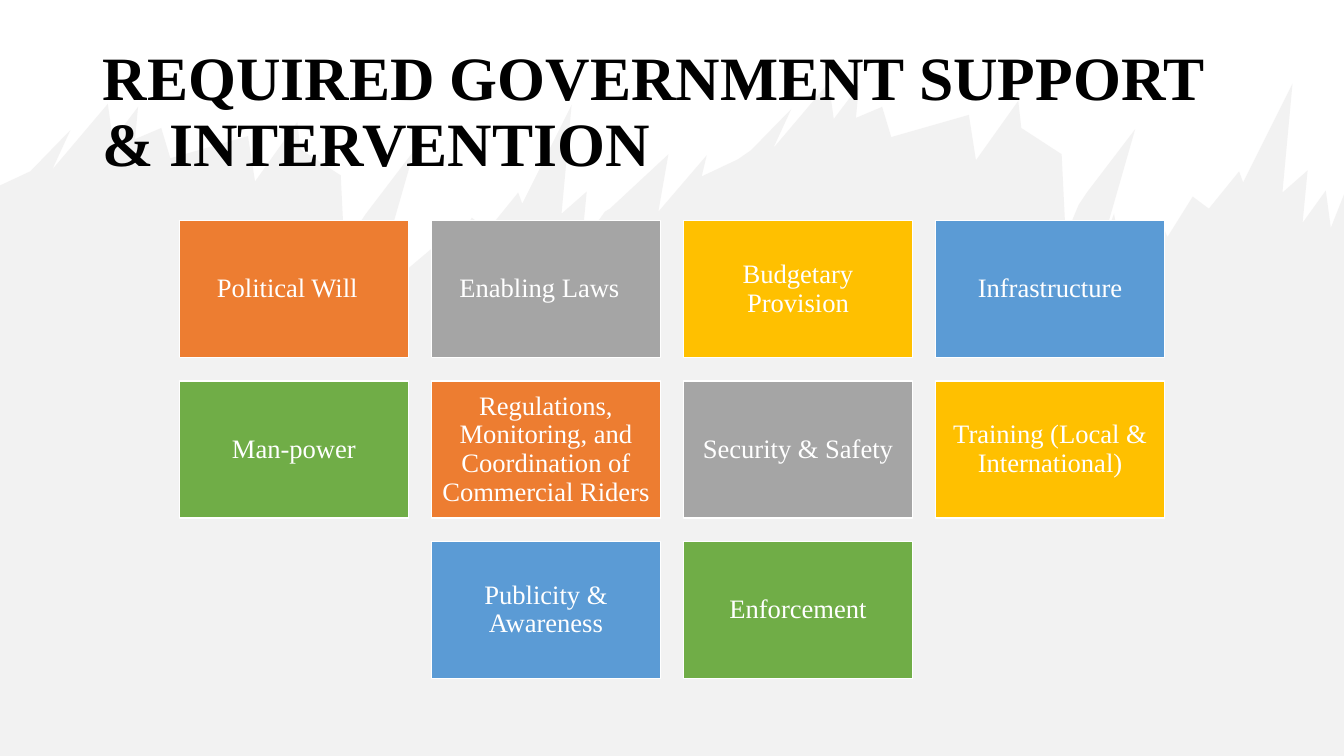
from dataclasses import dataclass
from itertools import cycle

from lxml.etree import SubElement
from pptx import Presentation
from pptx.dml.color import RGBColor as RGB
from pptx.enum.shapes import MSO_SHAPE as Shape
from pptx.enum.text import MSO_ANCHOR as Anchor, PP_ALIGN as Align
from pptx.oxml.ns import qn
from pptx.util import Pt

PX = 9144  # EMU in one px, 100 px to the inch
SLIDE_WIDTH, SLIDE_HEIGHT = 1333, 750


@dataclass(frozen=True)
class Theme:
    font: str = "Times New Roman"
    title_size: int = 44
    card_size: int = 19
    title_color: str = "000000"
    card_text: str = "FFFFFF"
    backdrop: str = "E7E6E6"
    backdrop_alpha: int = 50  # percent
    card_fills: tuple = ("ED7D31", "A5A5A5", "FFC000", "5B9BD5", "70AD47")


@dataclass(frozen=True)
class Flame:
    """A tongue of the skyline: its left foot, then the run and rise to its tip."""
    foot_x: int
    foot_y: int
    run: int
    rise: int

    def outline(self, dx, dy):
        x, y = self.foot_x + dx, self.foot_y + dy
        return [(x, y), (x + self.run, y - self.rise)]


THEME = Theme()

# The ridge, measured from its own left foot
RIDGE = [
    Flame(0, 0, 40, 41), Flame(22, -2, 55, 65),  # tall left peak
    Flame(82, -31, 25, 33), Flame(104, -32, 26, 11),
    Flame(139, -13, 77, 22), Flame(223, 10, 42, 59),  # broad middle
    Flame(268, -22, 40, -26), Flame(312, 85, 13, 31),
    Flame(333, 42, 48, 63), Flame(346, 101, 14, 38),  # leaning tongue
    Flame(367, 103, 39, 33), Flame(413, 86, 25, 40), Flame(454, 58, 30, 37),
    Flame(488, 32, 49, 98), Flame(527, 42, 25, 22),  # tall right peak
    Flame(547, 72, 23, 32),
]
RIDGE_STARTS = [(30, 170), (745, 149)]

# Small flames between the two ridges
VALLEY_START = (605, 207)
VALLEY = [Flame(0, 0, 58, 54), Flame(48, 3, 48, 56), Flame(91, -32, 36, 17)]

# Where the skyline meets the sides of the slide
LEFT_SHORE, RIGHT_NOTCH, RIGHT_SHORE = (0, 184), (1320, 226), (1333, 193)

# Card label and extra right inset
CARDS = [
    ("Political Will", 13),
    ("Enabling Laws", 13),
    ("Budgetary Provision", 0),
    ("Infrastructure", 0),
    ("Man-power", 0),
    ("Regulations, Monitoring, and Coordination of Commercial Riders", 0),
    ("Security & Safety", 0),
    ("Training (Local & International)", 0),
    ("Publicity & Awareness", 0),
    ("Enforcement", 0),
]
CARD_INSET = 8


def to_emu(*lengths):
    return [length * PX for length in lengths]


def write_text(shape, text, size, color, align, bold=False):
    frame = shape.text_frame
    frame.word_wrap = True
    frame.vertical_anchor = Anchor.MIDDLE
    paragraph = frame.paragraphs[0]
    paragraph.text = text
    paragraph.alignment = align
    paragraph.line_spacing = 0.9
    font = paragraph.font
    font.name, font.size, font.bold = THEME.font, Pt(size), bold
    font.color.rgb = RGB.from_string(color)
    return frame


def paint(shape, fill):
    shape.shadow.inherit = False
    shape.fill.solid()
    shape.fill.fore_color.rgb = RGB.from_string(fill)


def build_skyline():
    first_ridge, second_ridge = RIDGE_STARTS
    groups = [(first_ridge, RIDGE), (VALLEY_START, VALLEY), (second_ridge, RIDGE)]
    skyline = [LEFT_SHORE]
    for start, flames in groups:
        for flame in flames:
            skyline += flame.outline(*start)
    return skyline + [RIGHT_NOTCH, RIGHT_SHORE]


def add_backdrop(slide, left, top, width, height):
    outline = [(left + x, top + y) for x, y in build_skyline()]
    outline += [(left + width, top + height), (left, top + height)]
    builder = slide.shapes.build_freeform(*outline[0], scale=PX)
    builder.add_line_segments(outline[1:], close=True)
    shape = builder.convert_to_shape()
    paint(shape, THEME.backdrop)
    shape.line.fill.background()
    # Transparency of the fill
    color = shape.fill._xPr.find(".//" + qn("a:srgbClr"))
    SubElement(color, qn("a:alpha"), val=str(THEME.backdrop_alpha * 1000))


def add_title(slide, left, top, width, height):
    box = slide.shapes.add_textbox(*to_emu(left, top, width, height))
    write_text(box, "REQUIRED GOVERNMENT SUPPORT & INTERVENTION",
               THEME.title_size, THEME.title_color, Align.LEFT, bold=True)


def add_card(slide, box, label, fill, extra_right):
    card = slide.shapes.add_shape(Shape.RECTANGLE, *to_emu(*box))
    paint(card, fill)
    card.line.color.rgb = RGB.from_string(THEME.card_text)
    card.line.width = Pt(1)
    frame = write_text(card, label, THEME.card_size, THEME.card_text, Align.CENTER)
    frame.margin_left = frame.margin_top = frame.margin_bottom = CARD_INSET * PX
    frame.margin_right = (CARD_INSET + extra_right) * PX


def add_card_grid(slide, left, top, width, height, columns=4, gap=23):
    row_count = -(-len(CARDS) // columns)
    card_width = (width - gap * (columns - 1)) // columns
    card_height = (height - gap * (row_count - 1)) // row_count
    step_x, step_y = card_width + gap, card_height + gap
    fills = cycle(THEME.card_fills)
    for row in range(row_count):
        cards = CARDS[row * columns:(row + 1) * columns]
        # A short row is centred
        row_left = left + (columns - len(cards)) * step_x // 2
        for column, (label, extra_right) in enumerate(cards):
            box = (row_left + column * step_x, top + row * step_y,
                   card_width, card_height)
            add_card(slide, box, label, next(fills), extra_right)


def main():
    presentation = Presentation()
    presentation.slide_width, presentation.slide_height = to_emu(SLIDE_WIDTH, SLIDE_HEIGHT)
    slide = presentation.slides.add_slide(presentation.slide_layouts[6])
    add_backdrop(slide, 0, 0, SLIDE_WIDTH, SLIDE_HEIGHT)
    add_title(slide, 92, 40, 1150, 145)
    add_card_grid(slide, 178, 219, 977, 454)
    presentation.save("out.pptx")


if __name__ == "__main__":
    main()
